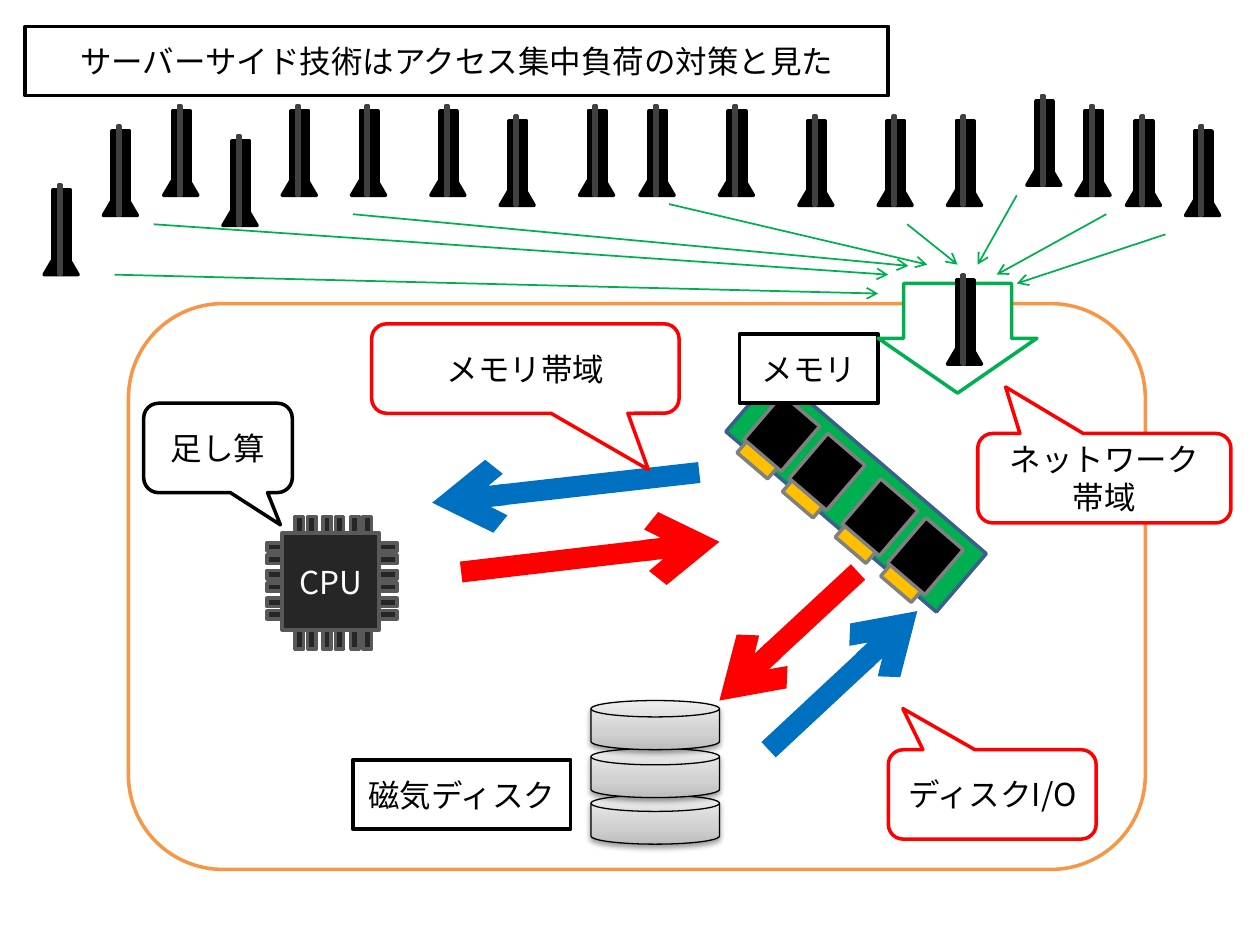
import copy
import dataclasses

import lxml.etree
import pptx
import pptx.dml.color
import pptx.enum.shapes
import pptx.enum.text
import pptx.oxml.ns
import pptx.util

SHAPE = pptx.enum.shapes.MSO_SHAPE
qn = pptx.oxml.ns.qn


@dataclasses.dataclass(frozen=True)
class Theme:
    font: str = "Noto Sans CJK JP"
    text_size: float = 18
    outline: float = 2
    hairline: float = 0.75
    access_line: float = 1
    transfer_line: float = 12
    white: str = "FFFFFF"
    black: str = "000000"
    server: str = "F79646"
    mast: str = "404040"
    chip: str = "262626"
    pin: str = "595959"
    board: str = "00B050"
    board_edge: str = "3A5F8C"
    contact: str = "FFC000"
    edge: str = "808080"
    network: str = "00B050"
    red: str = "FF0000"
    blue: str = "0070C0"
    disk: tuple = ((0, "BDBDBD"), (0.35, "D1D1D1"), (1, "EEEEEE"))


def rgb(value):
    return pptx.dml.color.RGBColor.from_string(value)


class Board:
    """Draws on a slide laid out as 100 columns by 75 rows of square cells."""
    COLUMNS, ROWS, CELL = 100, 75, 0.1

    def __init__(self, theme):
        self.theme = theme
        self.deck = pptx.Presentation()
        self.deck.slide_width = self.cells(self.COLUMNS)
        self.deck.slide_height = self.cells(self.ROWS)
        self.slide = self.deck.slides.add_slide(self.deck.slide_layouts[5])

    def cells(self, count):
        return pptx.util.Inches(count * self.CELL)

    def group(self):
        return self.slide.shapes.add_group_shape().shapes

    def paint(self, shape, fill, line, width=None):
        shape.fill.solid()
        shape.fill.fore_color.rgb = rgb(fill)
        shape.line.color.rgb = rgb(line)
        shape.line.width = pptx.util.Pt(width or self.theme.outline)

    def inscribe(self, shape, text, color):
        frame = shape.text_frame
        frame.text = text
        paragraph = frame.paragraphs[0]
        font = paragraph.runs[0].font
        formats = {
            frame: {"word_wrap": True,
                    "auto_size": pptx.enum.text.MSO_AUTO_SIZE.NONE,
                    "vertical_anchor": pptx.enum.text.MSO_ANCHOR.MIDDLE},
            paragraph: {"alignment": pptx.enum.text.PP_ALIGN.CENTER},
            font: {"name": self.theme.font,
                   "size": pptx.util.Pt(self.theme.text_size)},
        }
        for target, values in formats.items():
            for name, value in values.items():
                setattr(target, name, value)
        font.color.rgb = rgb(color)
        for properties in shape.element.iter(qn("a:rPr")):
            lxml.etree.SubElement(properties, qn("a:ea")).set("typeface", self.theme.font)

    def title(self, text, at):
        heading = self.slide.shapes.title
        for name, value in zip(("left", "top", "width", "height"), at):
            setattr(heading, name, self.cells(value))
        self.paint(heading, self.theme.white, self.theme.black)
        self.inscribe(heading, text, self.theme.black)

    def shape(self, kind, at, fill, line, parent=None, turn=0, adjust=(),
              text=None, ink=None, width=None):
        shapes = self.slide.shapes if parent is None else parent
        shape = shapes.add_shape(kind, *map(self.cells, at))
        shape.shadow.inherit = False
        shape.rotation = turn
        for index, value in enumerate(adjust):
            shape.adjustments[index] = value
        self.paint(shape, fill, line, width)
        if text:
            self.inscribe(shape, text, ink or self.theme.black)
        return shape

    def label(self, text, at):
        self.shape(SHAPE.RECTANGLE, at, self.theme.white, self.theme.black, text=text)

    def callout(self, text, at, tip, line):
        self.shape(SHAPE.ROUNDED_RECTANGULAR_CALLOUT, at, self.theme.white, line,
                   adjust=(*tip, 0.167), text=text)

    def arrow(self, start, end, color, width):
        connector = self.slide.shapes.add_connector(
            pptx.enum.shapes.MSO_CONNECTOR.STRAIGHT, *map(self.cells, (*start, *end)))
        connector.line.color.rgb = rgb(color)
        connector.line.width = pptx.util.Pt(width)
        properties = connector.element.spPr
        lxml.etree.SubElement(properties.find(qn("a:ln")), qn("a:tailEnd")).set("type", "arrow")
        lxml.etree.SubElement(properties, qn("a:effectLst"))

    def terminal(self, left, top):
        t, parent = self.theme, self.group()
        self.shape(SHAPE.RECTANGLE, (left, top, 1.4, 5.7), t.black, t.black, parent)
        self.shape(SHAPE.ISOSCELES_TRIANGLE, (left - 0.7, top + 4.4, 2.7, 2.3),
                   t.black, t.black, parent)
        self.shape(SHAPE.RECTANGLE, (left + 0.45, top - 0.4, 0.2, 7.1),
                   t.black, t.mast, parent)

    def cpu(self):
        t, parent = self.theme, self.group()
        for step in (0, 2.2, 4.4):
            for left in (20.9, 29.6):
                self.shape(SHAPE.MATH_EQUAL, (left, 42.5 + step, 2.2, 2.8),
                           t.chip, t.pin, parent)
            for top in (40.5, 49.2):
                self.shape(SHAPE.MATH_EQUAL, (23 + step, top, 2.5, 2.8),
                           t.chip, t.pin, parent, turn=90)
        self.shape(SHAPE.RECTANGLE, (22.4, 42.3, 7.7, 7.7), t.chip, t.pin, parent,
                   text="CPU", ink=t.white)

    def memory(self, turn=310.6):
        t, parent = self.theme, self.group()
        self.shape(SHAPE.RECTANGLE, (64.9, 28.1, 6.1, 22), t.board, t.board_edge, parent, turn)
        for left, top in ((59.7, 32.4), (63.3, 35.5), (67.5, 39.1), (71.1, 42.2)):
            self.shape(SHAPE.RECTANGLE, (left - 0.25, top + 2.4, 1.5, 3.2),
                       t.contact, t.edge, parent, turn)
            self.shape(SHAPE.RECTANGLE, (left, top, 4.7, 3.9), t.black, t.edge, parent, turn)

    def disk(self):
        t, parent = self.theme, self.group()
        for top in (63.1, 59.4, 55.6):
            platter = self.shape(SHAPE.FLOWCHART_MAGNETIC_DISK, (46.9, top, 10.2, 3.9),
                                 t.white, t.black, parent, width=t.hairline)
            platter.fill.gradient()
            platter.fill.gradient_angle = 90
            stops = platter.element.spPr.find(qn("a:gradFill")).find(qn("a:gsLst"))
            stops.append(copy.deepcopy(stops[-1]))
            for stop, (place, color) in zip(platter.fill.gradient_stops, t.disk):
                stop.position = place
                stop.color.rgb = rgb(color)
            # Soft shadow straight below
            effects = platter.element.spPr.find(qn("a:effectLst"))
            shadow = lxml.etree.SubElement(effects, qn("a:outerShdw"), blurRad="40000",
                                           dist="20000", dir="5400000", rotWithShape="0")
            tint = lxml.etree.SubElement(shadow, qn("a:srgbClr"), val=t.black)
            lxml.etree.SubElement(tint, qn("a:alpha"), val="38000")


def main():
    theme = Theme()
    board = Board(theme)
    board.title("サーバーサイド技術はアクセス集中負荷の対策と見た", (2, 2.1, 68.5, 5.5))

    # Server and its parts
    board.shape(SHAPE.ROUNDED_RECTANGLE, (10.2, 24.1, 80.7, 44.9), theme.white, theme.server)
    board.cpu()
    board.disk()
    board.memory()

    # Transfers between the parts
    for start, end, color in (
            ((61, 59.5), (72.8, 48.5), theme.blue),
            ((55.5, 37.5), (34.3, 39.9), theme.blue),
            ((36.6, 45.4), (57.1, 43), theme.red),
            ((68.1, 45.4), (57.1, 55.6), theme.red)):
        board.arrow(start, end, color, theme.transfer_line)

    # Names and remarks
    board.label("メモリ", (58.7, 26.5, 11, 5.5))
    board.label("磁気ディスク", (28, 60.3, 17.3, 5.5))
    for text, at, tip, color in (
            ("ディスクI/O", (70.5, 59.5, 16.5, 7.1), (-0.43, -0.96), theme.red),
            ("メモリ帯域", (29.5, 25.7, 24.4, 7.1), (0.4, 1.13), theme.red),
            ("足し算", (11.4, 32, 11.8, 7.1), (0.42, 0.86), theme.black),
            ("ネットワーク帯域", (77.6, 34.4, 20.1, 7.1), (-0.39, -1.02), theme.red)):
        board.callout(text, at, tip, color)

    # Terminals sending requests
    for left, top in (
            (4.2, 15.1), (8.9, 10.4), (13.7, 8.8), (18.4, 11.2), (23.1, 8.8), (28.6, 8.8),
            (34.9, 8.8), (40.4, 9.6), (46.7, 8.8), (51.5, 8.8), (57.8, 8.8), (64.1, 9.6),
            (70.4, 9.6), (75.9, 9.6), (82.2, 8), (86.1, 8.8), (90.1, 9.6), (94.8, 10.4)):
        board.terminal(left, top)

    # Network entrance and the requests that meet there
    board.shape(SHAPE.DOWN_ARROW, (69.7, 22.5, 12.6, 8.7), theme.white, theme.network,
                adjust=(0.68, 0.5))
    for start, end in (
            ((9.1, 21.8), (69.7, 23.3)), ((12.2, 17.8), (70.5, 21.8)),
            ((28, 17), (72.1, 21.1)), ((53.1, 16.2), (73.6, 21)),
            ((72, 17.8), (76, 21)), ((80.7, 15.5), (77.6, 21)),
            ((87.8, 17), (79.1, 21.8)), ((92.5, 18.6), (80.7, 22.5))):
        board.arrow(start, end, theme.network, theme.access_line)
    board.terminal(75.9, 22.2)

    board.deck.save("out.pptx")


if __name__ == "__main__":
    main()
